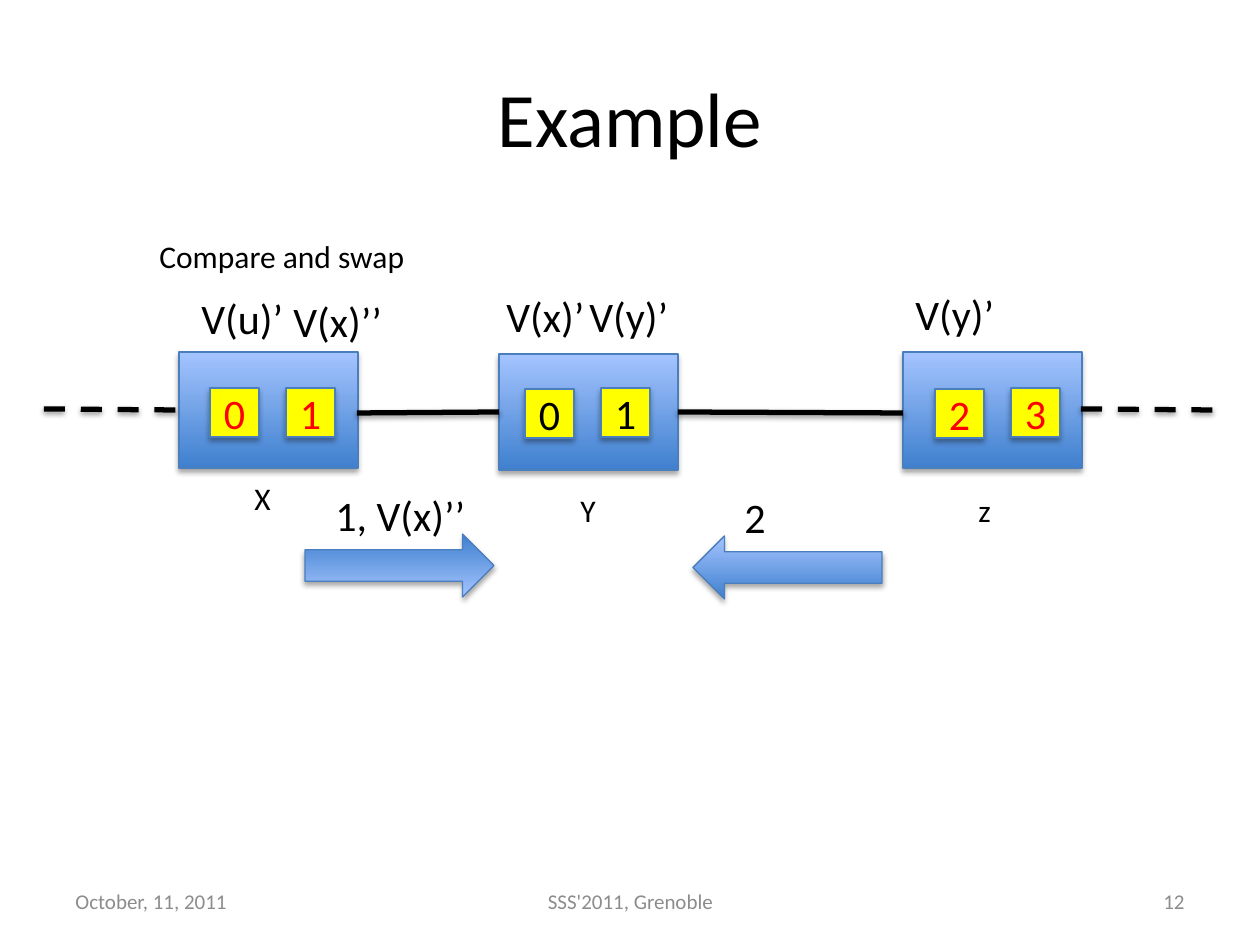
from lxml import etree
from pptx import Presentation
from pptx import util as u
from pptx.dml.color import RGBColor
from pptx.enum import dml, shapes, text
from pptx.oxml.ns import qn

HUES = {"ink": "000000", "gray": "8C8C8C", "deep": "3F80CE", "pale": "A4C4FF",
        "edge": "4B7EBC", "cell": "FFFF00", "red": "FF0000"}
FONT = "Calibri"
LEFT, MID, RIGHT = text.PP_ALIGN.LEFT, text.PP_ALIGN.CENTER, text.PP_ALIGN.RIGHT
RECT, ARROW = shapes.MSO_SHAPE.RECTANGLE, shapes.MSO_SHAPE.LEFT_ARROW


def px(*vals):
    """Turn pixels into EMU."""
    return [u.Emu(round(v * 914400 / 126)) for v in vals]


def hue(name):
    """Look up a colour."""
    return RGBColor.from_string(HUES[name])


def write(frame, words, size, color, align):
    """Put one run into a text frame."""
    para = frame.paragraphs[0]
    para.alignment = align
    run = para.add_run()
    run.text = words
    run.font.size = u.Pt(size)
    run.font.name = FONT
    run.font.color.rgb = hue(color)


def shade(item, alpha, dist):
    """Give a shape or line a soft shadow below it."""
    fx = etree.SubElement(item._element.spPr, qn("a:effectLst"))
    drop = etree.SubElement(fx, qn("a:outerShdw"), blurRad=str(u.Pt(3.1)),
                            dist=str(u.Pt(dist)), dir="5400000", rotWithShape="0")
    tint = etree.SubElement(drop, qn("a:srgbClr"), val=HUES["ink"])
    etree.SubElement(tint, qn("a:alpha"), val=str(alpha * 1000))


def label(slide, words, box, size=24, color="ink", align=LEFT, wrap=True, mid=False):
    """Add a text box."""
    frame = slide.shapes.add_textbox(*px(*box)).text_frame
    frame.word_wrap = wrap
    if mid:
        frame.vertical_anchor = text.MSO_ANCHOR.MIDDLE
    else:
        frame.auto_size = text.MSO_AUTO_SIZE.SHAPE_TO_FIT_TEXT
    write(frame, words, size, color, align)


def edge(shape):
    """Outline a shape and drop its shadow."""
    shape.line.color.rgb = hue("edge")
    shape.line.width = u.Pt(0.75)
    shade(shape, 35, 1.8)


def block(slide, kind, box, turn=0):
    """Add a blue gradient shape."""
    shape = slide.shapes.add_shape(kind, *px(*box))
    shape.rotation = turn
    shape.fill.gradient()
    shape.fill.gradient_angle = 90
    for stop, name in zip(shape.fill.gradient_stops, ("deep", "pale")):
        stop.color.rgb = hue(name)
    edge(shape)


def cell(slide, digit, left, top, color):
    """Add a yellow register square."""
    shape = slide.shapes.add_shape(RECT, *px(left, top, 49, 49))
    shape.fill.solid()
    shape.fill.fore_color.rgb = hue("cell")
    edge(shape)
    shape.text_frame.vertical_anchor = text.MSO_ANCHOR.MIDDLE
    write(shape.text_frame, digit, 24, color, MID)


def link(slide, ends, dash=False):
    """Add a line between nodes."""
    line = slide.shapes.add_connector(shapes.MSO_CONNECTOR.STRAIGHT, *px(*ends))
    line.line.color.rgb = hue("ink")
    line.line.width = u.Pt(3)
    if dash:
        line.line.dash_style = dml.MSO_LINE.DASH
    shade(line, 38, 1.6)


def main():
    """Build the slide."""
    deck = Presentation()
    deck.slide_width, deck.slide_height = px(1260, 945)
    slide = deck.slides.add_slide(deck.slide_layouts[6])

    label(slide, "Example", (63, 38, 1134, 158), 44, align=MID, mid=True)
    for words, left, wide, align in (("October, 11, 2011", 63, 294, LEFT),
                                     ("SSS'2011, Grenoble", 431, 399, MID),
                                     ("12", 903, 294, RIGHT)):
        label(slide, words, (left, 876, wide, 50), 12, "gray", align, mid=True)

    for left, top in ((499, 354), (179, 352), (903, 352)):
        block(slide, RECT, (left, top, 179, 116))
    for name, left, top, wide in (("X", 242, 473, 42), ("Y", 568, 485, 42),
                                  ("z", 966, 485, 38)):
        label(slide, name, (left, top, wide, 50), 18, wrap=False)

    for left in (44, 1081):
        link(slide, (left, 409, left + 135, 410), True)
    link(slide, (357, 413, 499, 412))
    link(slide, (678, 412, 903, 413))

    for pair, left, top, color in (("01", 210, 388, "red"), ("01", 525, 389, "ink"),
                                   ("23", 935, 389, "red")):
        cell(slide, pair[1], left + 76, 388, color)
        cell(slide, pair[0], left, top, color)

    label(slide, "Compare and swap", (147, 231, 272, 50), 18, wrap=False)
    for words, left in (("V(y)’", 577), ("V(x)’", 494)):
        label(slide, words, (left, 284, 105, 63), wrap=False)
    for words, left, top in (("V(x)’’", 281, 289), ("V(y)’", 903, 282),
                             ("V(u)’", 189, 286), ("2", 732, 485),
                             ("1, V(x)’’", 323, 483)):
        label(slide, words, (left, top, 160, 63))

    block(slide, ARROW, (693, 536, 189, 63))
    block(slide, ARROW, (305, 534, 189, 63), 180)
    deck.save("out.pptx")


if __name__ == "__main__":
    main()
